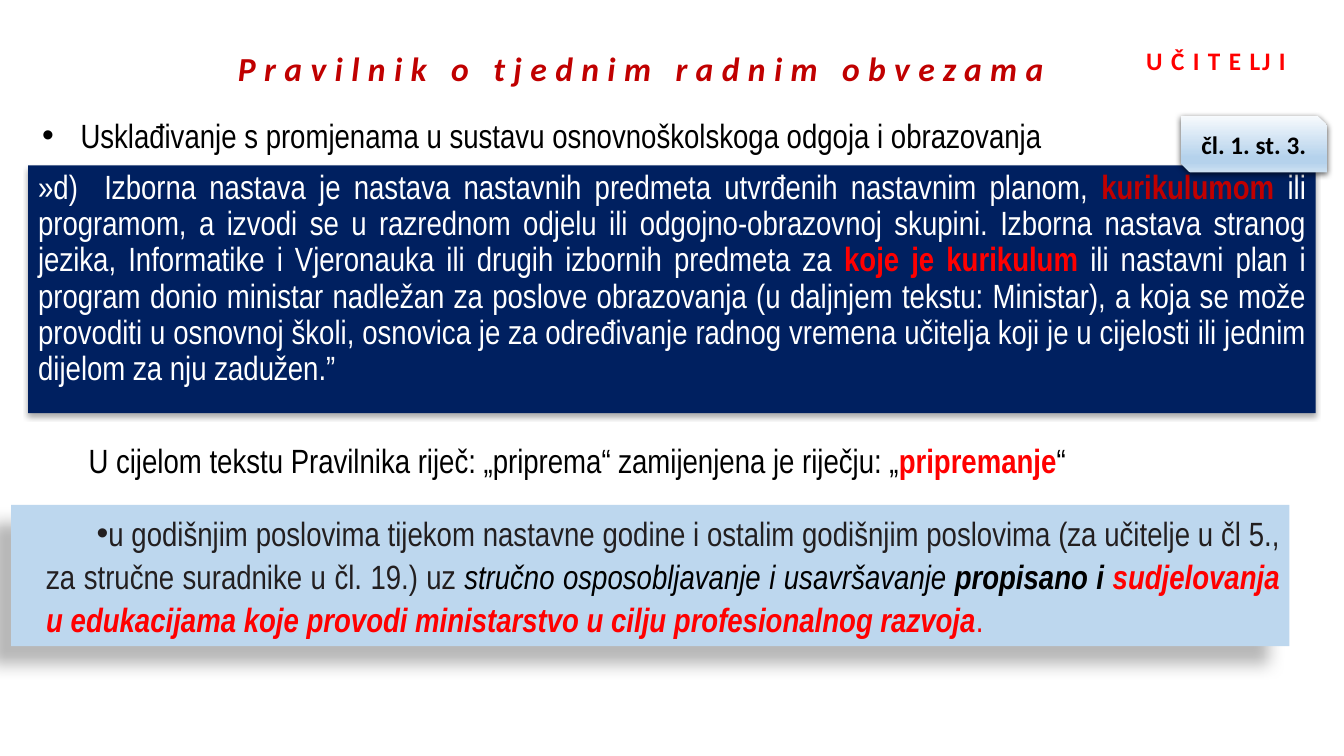
"""Build the slide on the rulebook of weekly working duties."""
from lxml import etree
from pptx import Presentation
from pptx.dml.color import RGBColor
from pptx.enum.shapes import MSO_SHAPE
from pptx.enum.text import MSO_ANCHOR, MSO_AUTO_SIZE, PP_ALIGN
from pptx.oxml import parse_xml
from pptx.oxml.ns import qn
from pptx.util import Inches, Pt

RECT, SNIP = MSO_SHAPE.RECTANGLE, MSO_SHAPE.SNIP_2_DIAG_RECTANGLE
TOP, MIDDLE = MSO_ANCHOR.TOP, MSO_ANCHOR.MIDDLE
LEFT, CENTER, JUSTIFY = PP_ALIGN.LEFT, PP_ALIGN.CENTER, PP_ALIGN.JUSTIFY
FIXED = MSO_AUTO_SIZE.NONE

WHITE = RGBColor(0xFF, 0xFF, 0xFF)
BLACK = RGBColor(0x00, 0x00, 0x00)
INK = RGBColor(0x23, 0x1F, 0x20)
RED = RGBColor(0xFF, 0x00, 0x00)
DARK_RED = RGBColor(0xC0, 0x00, 0x00)
NAVY = RGBColor(0x00, 0x20, 0x60)
SKY = RGBColor(0xBD, 0xD7, 0xEE)
STOPS = [(0, RGBColor(0xF7, 0xFA, 0xFD)), (74, RGBColor(0xB5, 0xD2, 0xEC)),
         (83, RGBColor(0xB5, 0xD2, 0xEC)), (100, RGBColor(0xCE, 0xE1, 0xF2))]
SPACE = "http://schemas.openxmlformats.org/drawingml/2006/main"
NARROW, SANS = "Arial Narrow", "Calibri"


def write(shape, runs, face, size=24, align=JUSTIFY, lines=1.0, margin=0,
          indent=0, bullet=False, anchor=TOP, wrap=True, gap=0):
    """Fill a shape with one paragraph of (text, colour, bold, italic) runs."""
    frame = shape.text_frame
    frame.word_wrap, frame.auto_size = wrap, FIXED
    frame.vertical_anchor = anchor
    para = frame.paragraphs[0]
    props = para._p.get_or_add_pPr()
    props.set("marL", str(Inches(margin)))
    props.set("indent", str(Inches(indent)))
    if bullet:
        etree.SubElement(props, qn("a:buFont")).set("typeface", "Arial")
        etree.SubElement(props, qn("a:buChar")).set("char", "•")
    para.alignment, para.line_spacing = align, lines
    para.space_before = Pt(0)
    for text, color, bold, italic in runs:
        run = para.add_run()
        run.text = text
        style = {"name": face, "size": Pt(size), "bold": bold, "italic": italic}
        for key, value in style.items():
            setattr(run.font, key, value)
        run.font.color.rgb = color
        if gap:
            run._r.get_or_add_rPr().set("spc", str(gap * 100))


def panel(kind, box, alpha, blur, dist, angle):
    """Add an unlined shape that casts a black shadow."""
    shape = slide.shapes.add_shape(kind, *map(Inches, box))
    shape.line.fill.background()
    shape.shadow.inherit = False
    effect = shape._element.spPr.find(qn("a:effectLst"))
    effect.append(parse_xml(
        f'<a:outerShdw xmlns:a="{SPACE}" blurRad="{Pt(blur)}" '
        f'dist="{Pt(dist)}" dir="{angle * 60000}" algn="ctr" '
        f'rotWithShape="0"><a:srgbClr val="{BLACK}">'
        f'<a:alpha val="{alpha * 1000}"/></a:srgbClr></a:outerShdw>'))
    return shape


deck = Presentation()
deck.slide_width, deck.slide_height = Inches(13.33), Inches(7.5)
slide = deck.slides.add_slide(deck.slide_layouts[5])

title = slide.shapes.title
place = {"left": 2.26, "top": 0.43, "width": 8.34, "height": 0.5}
for key, value in place.items():
    setattr(title, key, Inches(value))
write(title, [("Pravilnik o tjednim radnim obvezama", DARK_RED, True, True)],
      SANS, align=LEFT, wrap=False, gap=6)

quote = panel(RECT, (0.28, 1.64, 12.77, 2.46), 32, 3.5, 2.2, 90)
quote.fill.solid()
quote.fill.fore_color.rgb = NAVY
write(quote, [
    ("»d)  Izborna nastava je nastava nastavnih predmeta utvrđenih nastavnim "
     "planom, ", WHITE, False, False),
    ("kurikulumom ", DARK_RED, True, False),
    ("ili programom, a izvodi se u razrednom odjelu ili odgojno-obrazovnoj "
     "skupini. Izborna nastava stranog jezika, Informatike i Vjeronauka ili "
     "drugih izbornih predmeta za ", WHITE, False, False),
    ("koje je kurikulum ", RED, True, False),
    ("ili nastavni plan i program donio ministar nadležan za poslove "
     "obrazovanja (u daljnjem tekstu: Ministar), a koja se može provoditi u "
     "osnovnoj školi, osnovica je za određivanje radnog vremena učitelja koji "
     "je u cijelosti ili jednim dijelom za nju zadužen.”", WHITE, False, False),
], NARROW, lines=0.9)

badge = panel(SNIP, (11.71, 1.15, 1.45, 0.56), 63, 4.5, 1.5, 90)
badge.fill.gradient()
badge.fill.gradient_angle = 270
ramp = badge._element.spPr.find(qn("a:gradFill")).find(qn("a:gsLst"))
for stop in list(ramp):
    ramp.remove(stop)
for share, color in STOPS:
    stop = etree.SubElement(ramp, qn("a:gs"), pos=str(share * 1000))
    etree.SubElement(stop, qn("a:srgbClr"), val=str(color))
write(badge, [("čl. 1. st. 3.", BLACK, True, False)], SANS, 18, CENTER,
      anchor=MIDDLE)

notes = [
    ((11.27, 0.4, 1.89, 0.4), [("U Č I T E LJ I", RED, True, False)],
     {"face": SANS, "size": 18, "align": LEFT, "gap": 1}),
    ((0.32, 1.06, 11.89, 0.5),
     [("Usklađivanje s promjenama u sustavu osnovnoškolskoga odgoja i "
       "obrazovanja", BLACK, False, False)],
     {"face": NARROW, "lines": 1.07, "margin": 0.38, "indent": -0.38,
      "bullet": True}),
    ((0.28, 4.29, 12.52, 0.53),
     [("U cijelom tekstu Pravilnika riječ: „priprema“ zamijenjena je riječju: „",
       BLACK, False, False),
      ("pripremanje", RED, True, False), ("“", BLACK, False, False)],
     {"face": NARROW, "lines": 1.07, "indent": 0.5}),
]
for box, runs, style in notes:
    write(slide.shapes.add_textbox(*map(Inches, box)), runs, **style)

duties = panel(RECT, (0.11, 5.01, 12.68, 1.4), 28, 11.8, 19.7, 141)
duties.fill.solid()
duties.fill.fore_color.rgb = SKY
write(duties, [
    ("u godišnjim poslovima tijekom nastavne godine i ostalim godišnjim "
     "poslovima (za učitelje u čl 5., za stručne suradnike u čl. 19.) uz ",
     INK, False, False),
    ("stručno osposobljavanje i usavršavanje ", BLACK, False, True),
    ("propisano i ", BLACK, True, True),
    ("sudjelovanja u edukacijama koje provodi ministarstvo u cilju "
     "profesionalnog razvoja", RED, True, True),
    (".", RED, False, False),
], NARROW, lines=1.07, margin=0.25, indent=0.5, bullet=True)

deck.save("out.pptx")
